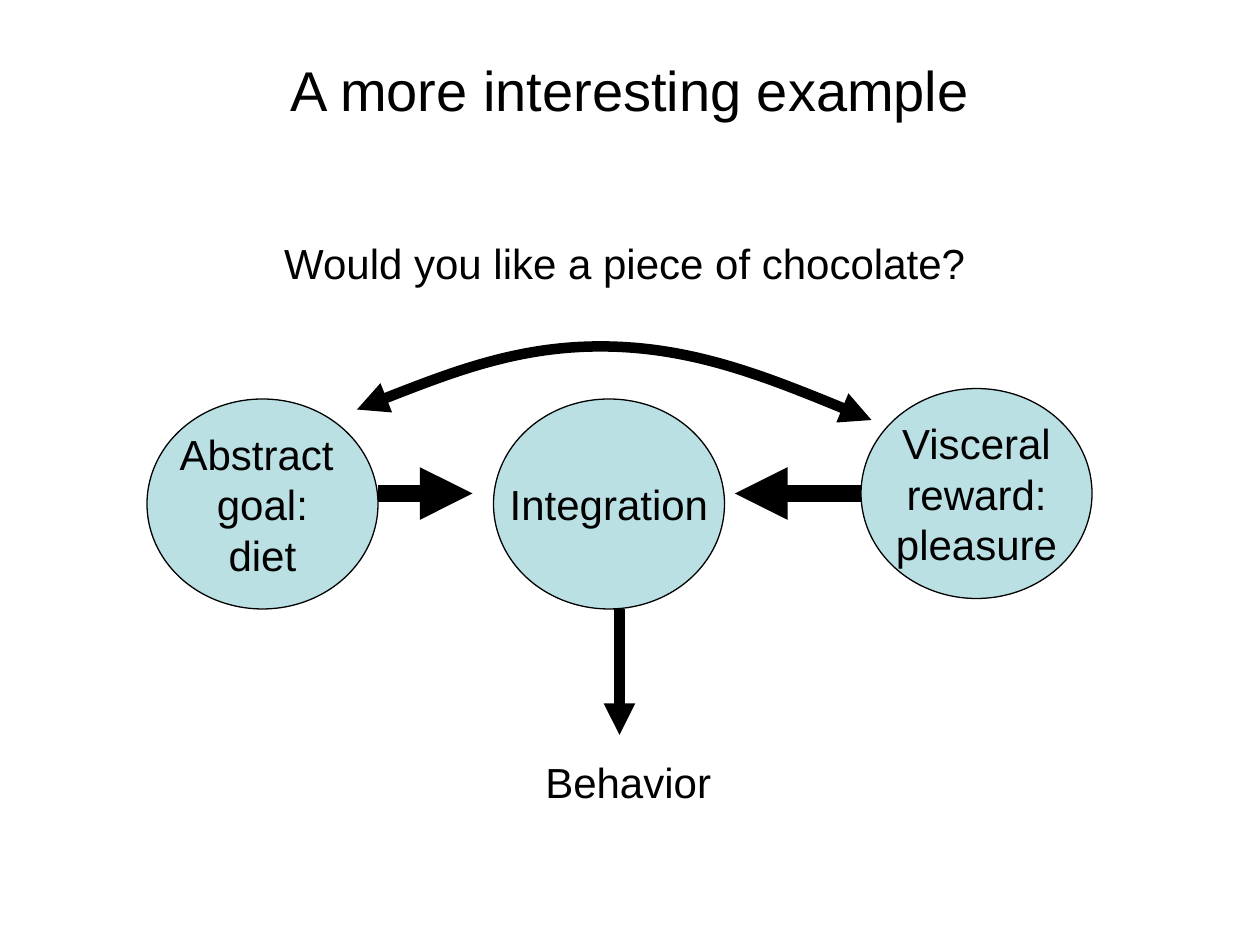
from dataclasses import dataclass

import pptx
import pptx.dml.color
import pptx.enum.shapes
import pptx.enum.text
import pptx.oxml.ns
import pptx.oxml.xmlchemy
import pptx.util

Pt = pptx.util.Pt
qn = pptx.oxml.ns.qn
make = pptx.oxml.xmlchemy.OxmlElement
Align = pptx.enum.text.PP_ALIGN
Anchor = pptx.enum.text.MSO_ANCHOR

BLACK = pptx.dml.color.RGBColor(0x00, 0x00, 0x00)
BLUE = pptx.dml.color.RGBColor(0xBB, 0xE0, 0xE3)
FONT = "Arial"


@dataclass
class Label:
    text: str
    left: float
    top: float
    width: float
    height: float
    size: float = 24
    align: Align = Align.CENTER
    anchor: Anchor = Anchor.TOP
    wrap: bool = True


@dataclass
class Node:
    lines: list[str]
    left: float
    top: float


@dataclass
class Arrow:
    start: tuple[float, float]
    end: tuple[float, float]
    weight: float


LABELS = [
    Label("A more interesting example", 54, 6, 612, 90, 32, anchor=Anchor.MIDDLE),
    Label("Would you like a piece of chocolate?", 66, 132, 582, 36),
    Label("Behavior", 304.5, 429, 109.5, 36, align=Align.LEFT, wrap=False),
]
NODES = [
    Node(["Abstract ", "goal:", "diet"], 84, 228),
    Node(["Visceral", "reward:", "pleasure"], 492, 222),
    Node(["Integration"], 282, 228),
]
ARROWS = [
    Arrow((216, 282), (270, 282), 10),
    Arrow((492, 282), (420, 282), 10),
    Arrow((354, 348), (354, 420), 6),
]
# Start point, then two control points and an end point per curve
ARC = [(204, 234), (251, 215), (299, 197), (348, 198),
       (397, 199), (448, 219), (498, 240)]


def write(frame, lines: list[str], size: float, align: Align,
          anchor: Anchor, wrap: bool) -> None:
    frame.word_wrap = wrap
    frame.vertical_anchor = anchor
    for i, line in enumerate(lines):
        para = frame.paragraphs[0] if i == 0 else frame.add_paragraph()
        para.alignment = align
        run = para.add_run()
        run.text = line
        run.font.name = FONT
        run.font.size = Pt(size)
        run.font.color.rgb = BLACK


def add_label(slide, label: Label) -> None:
    box = slide.shapes.add_textbox(Pt(label.left), Pt(label.top),
                                   Pt(label.width), Pt(label.height))
    write(box.text_frame, [label.text], label.size, label.align,
          label.anchor, label.wrap)


def add_node(slide, node: Node) -> None:
    oval = slide.shapes.add_shape(pptx.enum.shapes.MSO_SHAPE.OVAL, Pt(node.left),
                                  Pt(node.top), Pt(132), Pt(120))
    oval.shadow.inherit = False
    oval.fill.solid()
    oval.fill.fore_color.rgb = BLUE
    oval.line.color.rgb = BLACK
    oval.line.width = Pt(0.75)
    write(oval.text_frame, node.lines, 24, Align.CENTER, Anchor.MIDDLE, False)


def set_line(shape, weight: float, ends: list[str]) -> None:
    shape.line.color.rgb = BLACK
    shape.line.width = Pt(weight)
    line = shape.element.spPr.find(qn("a:ln"))
    for end in ends:
        tip = make(end)
        tip.set("type", "triangle")
        line.append(tip)


def add_arrow(slide, arrow: Arrow) -> None:
    link = slide.shapes.add_connector(
        pptx.enum.shapes.MSO_CONNECTOR.STRAIGHT,
        *(Pt(n) for n in arrow.start + arrow.end))
    set_line(link, arrow.weight, ["a:tailEnd"])
    link.element.spPr.append(make("a:effectLst"))


def add_arc(slide, points: list[tuple[float, float]], weight: float) -> None:
    pen = slide.shapes.build_freeform(*points[0], scale=Pt(1))
    pen.add_line_segments(points[1:], close=False)
    arc = pen.convert_to_shape()
    arc.shadow.inherit = False
    arc.fill.background()
    set_line(arc, weight, ["a:headEnd", "a:tailEnd"])
    # Join each three straight steps into one Bezier curve
    steps = list(arc.element.iter(qn("a:lnTo")))
    for i in range(0, len(steps), 3):
        curve = make("a:cubicBezTo")
        steps[i].addprevious(curve)
        for step in steps[i:i + 3]:
            curve.append(step[0])
            step.getparent().remove(step)


def main() -> None:
    deck = pptx.Presentation()
    deck.slide_width, deck.slide_height = Pt(720), Pt(540)
    slide = deck.slides.add_slide(deck.slide_layouts[6])

    # Title, question and outcome
    for label in LABELS:
        add_label(slide, label)
    # Goals, reward and where they meet
    for node in NODES:
        add_node(slide, node)
    # Flow between the parts
    for arrow in ARROWS:
        add_arrow(slide, arrow)
    add_arc(slide, ARC, 6)

    deck.save("out.pptx")


if __name__ == "__main__":
    main()
